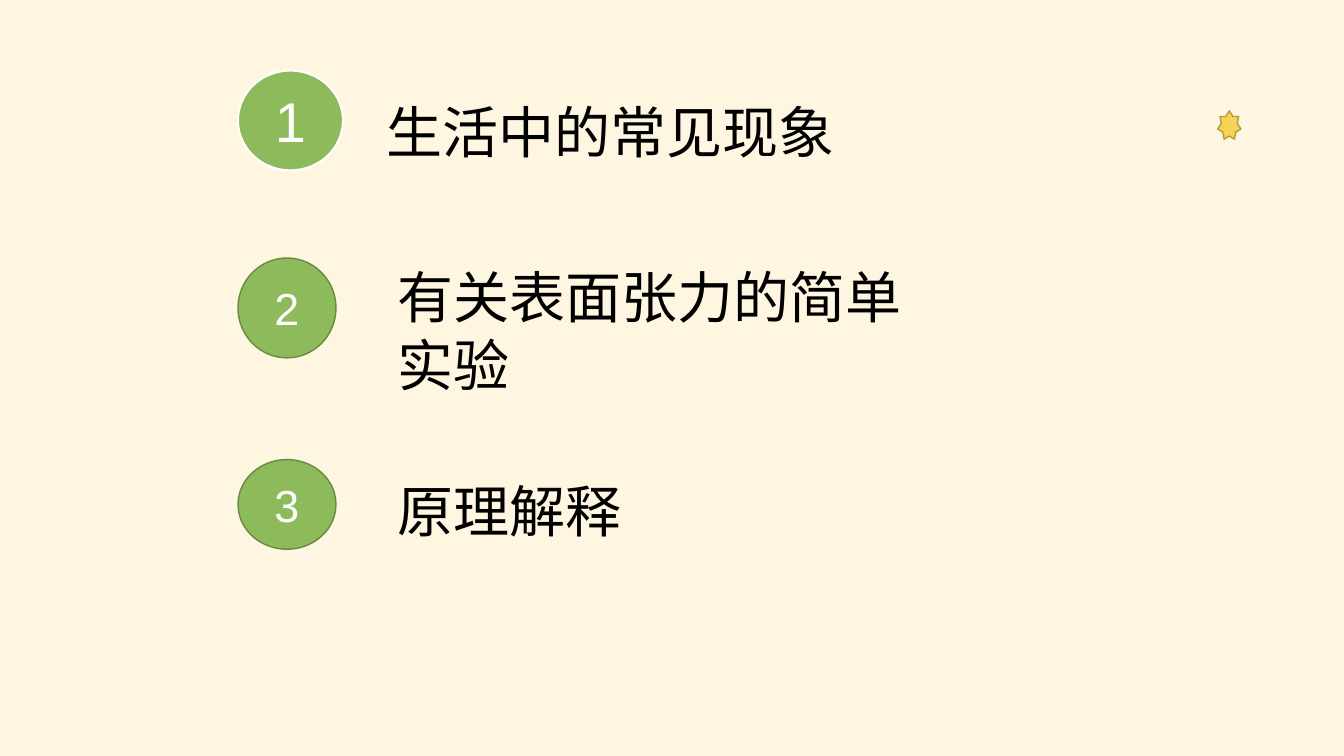
from pptx import Presentation
from pptx.dml.color import RGBColor
from pptx.enum.shapes import MSO_SHAPE
from pptx.enum.text import MSO_ANCHOR, MSO_AUTO_SIZE, PP_ALIGN
from pptx.util import Pt

ELLIPSE, STAR = MSO_SHAPE.OVAL, MSO_SHAPE.STAR_7_POINT
MIDDLE, CENTER = MSO_ANCHOR.MIDDLE, PP_ALIGN.CENTER
GROW = MSO_AUTO_SIZE.SHAPE_TO_FIT_TEXT
BLANK_LAYOUT = 6

COLORS = {
    "cream": "FEF6E1", "green": "8DBA5B", "dark_green": "688A43",
    "white": "FFFFFF", "black": "000000", "yellow": "F4D356", "ochre": "B59C40",
}


class AgendaPage:
    font = "Arial"
    topic_size = 40

    def __init__(self, deck):
        self.page = deck.slides.add_slide(deck.slide_layouts[BLANK_LAYOUT])
        background = self.page.background.fill
        background.solid()
        background.fore_color.rgb = self.color("cream")

    def color(self, name):
        return RGBColor.from_string(COLORS[name])

    def set_text(self, frame, text, size, color):
        frame.text = text
        for span in frame.paragraphs[0].runs:
            span.font.name = self.font
            span.font.size = Pt(size)
            span.font.color.rgb = self.color(color)

    def shape(self, kind, bounds, fill, line, line_width=1):
        shape = self.page.shapes.add_shape(kind, *map(Pt, bounds))
        shape.shadow.inherit = False
        shape.fill.solid()
        shape.fill.fore_color.rgb = self.color(fill)
        shape.line.color.rgb = self.color(line)
        shape.line.width = Pt(line_width)
        return shape

    def badge(self, number, bounds, size, line, line_width):
        frame = self.shape(ELLIPSE, bounds, "green", line, line_width).text_frame
        self.set_text(frame, str(number), size, "white")
        frame.vertical_anchor = MIDDLE
        frame.paragraphs[0].alignment = CENTER

    def topic(self, text, bounds):
        frame = self.page.shapes.add_textbox(*map(Pt, bounds)).text_frame
        frame.word_wrap = True
        frame.auto_size = GROW
        self.set_text(frame, text, self.topic_size, "black")


def main():
    deck = Presentation()
    deck.slide_width, deck.slide_height = Pt(960), Pt(540)
    agenda = AgendaPage(deck)

    # Numbered topics: badge bounds, number size, outline, topic, topic bounds
    topics = [
        ((170, 50.4, 75, 71.3), 40, ("white", 1.5),
         "生活中的常见现象", (269.3, 66.2, 421.2, 55.4)),
        ((170, 184.3, 70, 71.3), 32, ("dark_green", 1),
         "有关表面张力的简单实验", (277.2, 184.3, 383.8, 104.4)),
        ((170, 328.3, 70, 64), 32, ("dark_green", 1),
         "原理解释", (277.2, 337, 365.8, 55.4)),
    ]
    for number, (badge, size, outline, text, bounds) in enumerate(topics, 1):
        agenda.badge(number, badge, size, *outline)
        agenda.topic(text, bounds)

    # Star ornament
    agenda.shape(STAR, (869.8, 79.2, 16.6, 20.2), "yellow", "ochre")

    deck.save("out.pptx")


if __name__ == "__main__":
    main()
